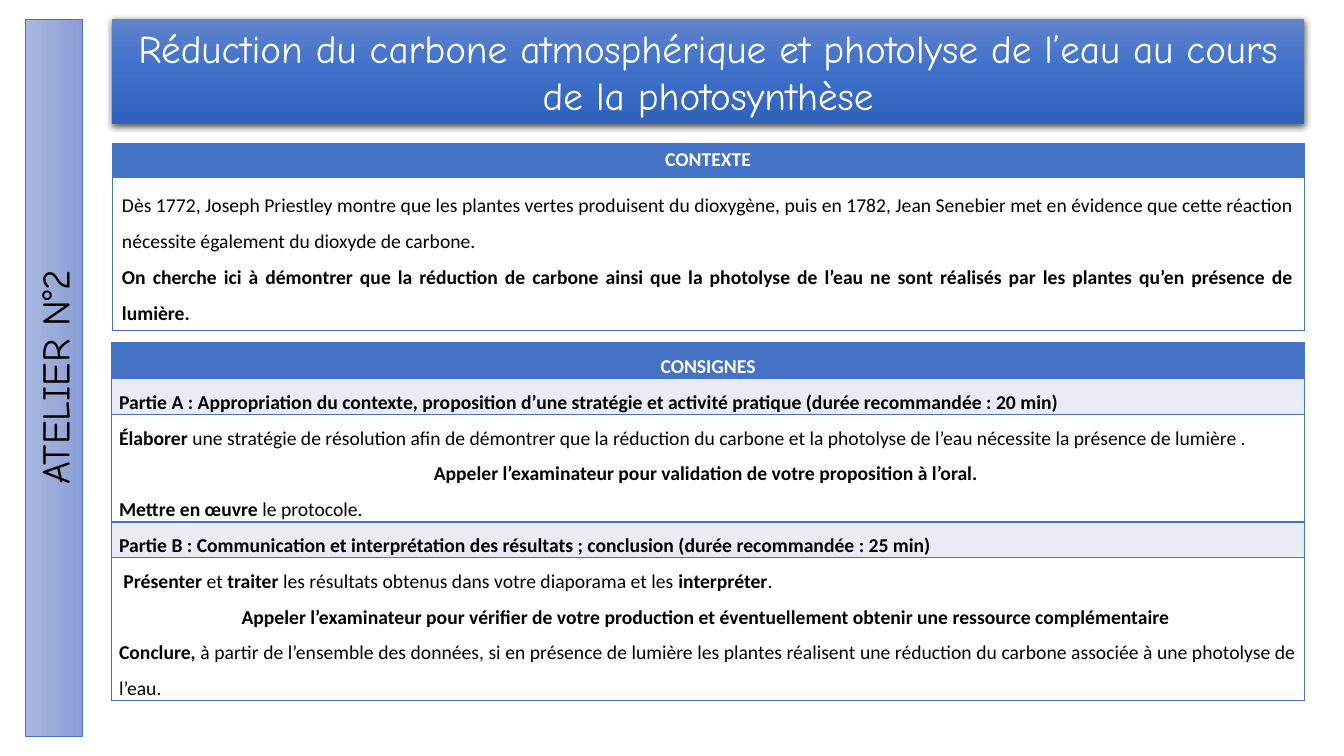
from copy import deepcopy
from dataclasses import dataclass

from lxml.etree import SubElement
from pptx import Presentation
from pptx.dml.color import RGBColor as Rgb
from pptx.enum.shapes import MSO_SHAPE as Shape
from pptx.enum.text import MSO_ANCHOR as Anchor
from pptx.enum.text import MSO_AUTO_SIZE as AutoSize
from pptx.enum.text import PP_ALIGN as Align
from pptx.oxml.ns import qn
from pptx.util import Cm, Pt


@dataclass(frozen=True)
class Theme:
    accent: str = "4472C4"
    section: str = "E9EBF5"
    white: str = "FFFFFF"
    black: str = "000000"
    banner: tuple = ("6183CB", "3E70CA", "3062BB")
    sidebar: tuple = ("A8B7DF", "9AABD9", "889ED7")
    display_font: str = "Comic Neue"
    body_font: str = "Calibri"
    display_size: int = 28
    body_size: int = 14


THEME = Theme()
LEFT = Cm(2.82)
WIDTH = Cm(30.05)

TITLE = "Réduction du carbone atmosphérique et photolyse de l’eau au cours de la photosynthèse"


@dataclass(frozen=True)
class Row:
    height: float
    paragraphs: tuple
    fill: str = THEME.white
    color: str = THEME.black
    spacing: float = 1.5


def bold(text, align=Align.JUSTIFY):
    return align, [(text, True)]


def mixed(*runs):
    return Align.JUSTIFY, runs


def heading(height, text, spacing):
    return Row(height, (bold(text, Align.CENTER),), THEME.accent, THEME.white, spacing)


def section(text):
    return Row(0.9, (bold(text),), THEME.section)


CONTEXT = [
    heading(0.85, "CONTEXTE", 1.0),
    Row(3.82, (
        mixed(("Dès 1772, Joseph Priestley montre que les plantes vertes produisent du dioxygène, "
               "puis en 1782, Jean Senebier met en évidence que cette réaction nécessite "
               "également du dioxyde de carbone.", False)),
        bold("On cherche ici à démontrer que la réduction de carbone ainsi que la photolyse de "
             "l’eau ne sont réalisés par les plantes qu’en présence de lumière."),
    )),
]

INSTRUCTIONS = [
    heading(0.9, "CONSIGNES", 1.5),
    section("Partie A : Appropriation du contexte, proposition d’une stratégie et activité "
            "pratique (durée recommandée : 20 min)"),
    Row(2.71, (
        mixed(("Élaborer ", True),
              ("une stratégie de résolution afin de démontrer que la réduction du carbone et la "
               "photolyse de l’eau nécessite la présence de lumière .", False)),
        bold("Appeler l’examinateur pour validation de votre proposition à l’oral. ", Align.CENTER),
        mixed(("Mettre en œuvre ", True), ("le protocole.", False)),
    )),
    section("Partie B : Communication et interprétation des résultats ; conclusion "
            "(durée recommandée : 25 min)"),
    Row(3.56, (
        mixed((" Présenter ", True), ("et", False), (" traiter ", True),
              ("les résultats obtenus dans votre diaporama et les ", False),
              ("interpréter", True), (".", False)),
        bold("Appeler l’examinateur pour vérifier de votre production et éventuellement obtenir "
             "une ressource complémentaire ", Align.CENTER),
        mixed(("Conclure, ", True),
              ("à partir de l’ensemble des données, si en présence de lumière les plantes "
               "réalisent une réduction du carbone associée à une photolyse de l’eau.", False)),
    )),
]


def add_run(paragraph, text, font, size, color, is_bold=False):
    run = paragraph.add_run()
    run.text = text
    run.font.name = font
    run.font.size = Pt(size)
    run.font.bold = is_bold
    run.font.color.rgb = Rgb.from_string(color)


def fill_gradient(panel, colors):
    panel.fill.gradient()
    panel.fill.gradient_angle = 270
    stop_list = panel.element.spPr.find(qn("a:gradFill")).find(qn("a:gsLst"))
    stop_list.append(deepcopy(stop_list[-1]))
    for index, (stop, color) in enumerate(zip(panel.fill.gradient_stops, colors)):
        stop.position = index / (len(colors) - 1)
        stop.color.rgb = Rgb.from_string(color)


def add_soft_shadow(panel):
    effects = SubElement(panel.element.spPr, qn("a:effectLst"))
    shadow = SubElement(effects, qn("a:outerShdw"), blurRad=str(Pt(4.5)), dist=str(Pt(1.5)),
                        dir="5400000", algn="ctr", rotWithShape="0")
    tint = SubElement(shadow, qn("a:srgbClr"), val=THEME.black)
    SubElement(tint, qn("a:alpha"), val="63000")


def write_display_text(panel, text, color):
    frame = panel.text_frame
    frame.word_wrap = True
    frame.auto_size = AutoSize.NONE
    frame.vertical_anchor = Anchor.MIDDLE
    paragraph = frame.paragraphs[0]
    paragraph.alignment = Align.CENTER
    add_run(paragraph, text, THEME.display_font, THEME.display_size, color)


def place_title(slide):
    title = slide.shapes.title
    title.left, title.top, title.width, title.height = LEFT, Cm(0.48), WIDTH, Cm(2.64)
    fill_gradient(title, THEME.banner)
    add_soft_shadow(title)
    write_display_text(title, TITLE, THEME.white)


def add_sidebar(slide):
    sidebar = slide.shapes.add_shape(Shape.RECTANGLE, Cm(-7.67), Cm(8.79), Cm(18.06), Cm(1.45))
    sidebar.rotation = 270
    sidebar.shadow.inherit = False
    fill_gradient(sidebar, THEME.sidebar)
    sidebar.line.color.rgb = Rgb.from_string(THEME.accent)
    sidebar.line.width = Pt(0.5)
    write_display_text(sidebar, "ATELIER N°2", THEME.black)


def add_borders(cell, width):
    properties = cell._tc.get_or_add_tcPr()
    for side in ("a:lnL", "a:lnR", "a:lnT", "a:lnB"):
        border = SubElement(properties, qn(side), w=str(Pt(width)))
        SubElement(SubElement(border, qn("a:solidFill")), qn("a:srgbClr"), val=THEME.accent)


def write_cell(cell, row):
    cell.fill.solid()
    cell.fill.fore_color.rgb = Rgb.from_string(row.fill)
    frame = cell.text_frame
    for index, (align, runs) in enumerate(row.paragraphs):
        paragraph = frame.add_paragraph() if index else frame.paragraphs[0]
        paragraph.alignment = align
        paragraph.line_spacing = row.spacing
        for text, is_bold in runs:
            add_run(paragraph, text, THEME.body_font, THEME.body_size, row.color, is_bold)


def add_panel(slide, top, rows, border, margins=None):
    height = Cm(sum(row.height for row in rows))
    panel = slide.shapes.add_table(len(rows), 1, LEFT, top, WIDTH, height).table
    panel.first_row = False
    panel.horz_banding = False
    for index, row in enumerate(rows):
        panel.rows[index].height = Cm(row.height)
        cell = panel.cell(index, 0)
        if margins:
            cell.margin_left, cell.margin_top, cell.margin_right, cell.margin_bottom = margins
        add_borders(cell, border)
        write_cell(cell, row)


def main():
    deck = Presentation()
    deck.slide_width, deck.slide_height = Cm(33.87), Cm(19.05)
    slide = deck.slides.add_slide(deck.slide_layouts[5])
    place_title(slide)
    add_sidebar(slide)
    add_panel(slide, Cm(3.61), CONTEXT, 0.5)
    add_panel(slide, Cm(8.64), INSTRUCTIONS, 1, (Cm(0.18), 0, Cm(0.18), 0))
    deck.save("out.pptx")


if __name__ == "__main__":
    main()
